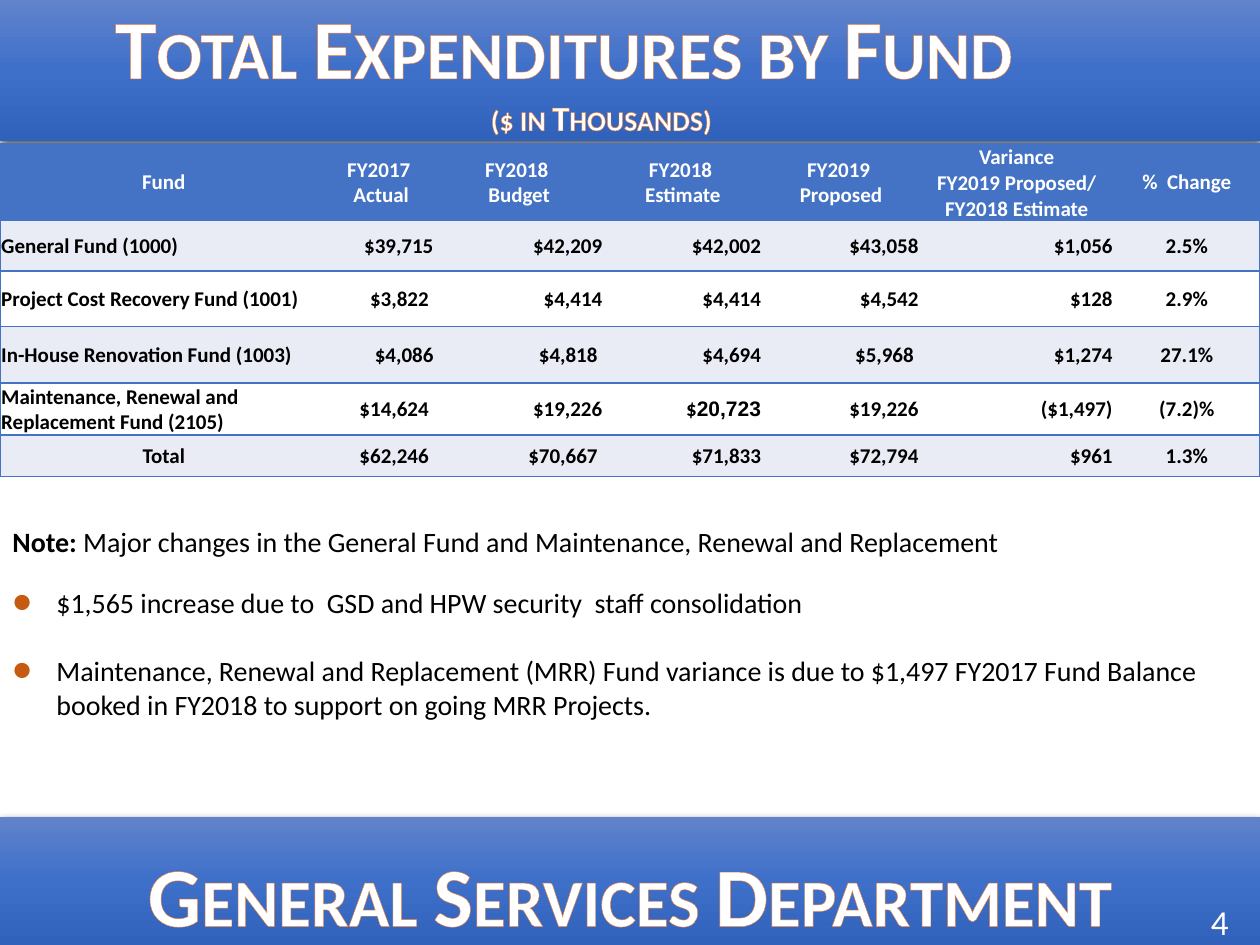
from copy import deepcopy
from dataclasses import dataclass

from pptx import Presentation
from pptx.dml.color import RGBColor
from pptx.enum.shapes import MSO_SHAPE
from pptx.enum.text import MSO_ANCHOR, MSO_AUTO_SIZE, PP_ALIGN
from pptx.oxml import parse_xml
from pptx.oxml.ns import nsdecls, qn
from pptx.util import Pt

RECT = MSO_SHAPE.RECTANGLE
LEFT, CENTER, RIGHT = PP_ALIGN.LEFT, PP_ALIGN.CENTER, PP_ALIGN.RIGHT
TOP, MIDDLE = MSO_ANCHOR.TOP, MSO_ANCHOR.MIDDLE
FIXED = MSO_AUTO_SIZE.NONE

WHITE = RGBColor(0xFF, 0xFF, 0xFF)
BLACK = RGBColor(0x00, 0x00, 0x00)
BLUE = RGBColor(0x44, 0x72, 0xC4)
PALE = RGBColor(0xE9, 0xEB, 0xF5)
ORANGE = RGBColor(0xED, 0x7D, 0x31)
RUST = RGBColor(0xC5, 0x5A, 0x11)
SHADES = (
    RGBColor(0x61, 0x83, 0xCB),
    RGBColor(0x3E, 0x70, 0xCA),
    RGBColor(0x30, 0x62, 0xBB),
)
PLAIN = "{2D5ABB26-0587-4C30-8999-92F81FD0307C}"


@dataclass(frozen=True)
class Box:
    left: float
    top: float
    width: float
    height: float

    def points(self) -> tuple:
        return Pt(self.left), Pt(self.top), Pt(self.width), Pt(self.height)


@dataclass(frozen=True)
class Style:
    size: float
    color: RGBColor = BLACK
    bold: bool = False
    font: str = "Calibri"
    fancy: bool = False


@dataclass(frozen=True)
class Run:
    text: str
    style: Style


BANNER = Style(48, WHITE, True, fancy=True)
UNITS = Style(20, WHITE, True, fancy=True)
NUMBER = Style(20, WHITE)
BODY = Style(16)
STRONG = Style(16, bold=True)
HEAD = Style(12, WHITE, True)
CELL = Style(12, bold=True)
ARIAL = Style(12, bold=True, font="Arial")

BANDS = (Box(0, 0, 720, 80.6), Box(0, 466.6, 720, 73.4))
COLS = (187.2, 61.2, 96.5, 90.7, 90, 110.9, 83.5)
ROWS = (44, 28.8, 31.7, 32.4, 29.5, 23.8)
HEADS = (
    ("Fund",),
    ("FY2017 ", "Actual"),
    ("FY2018 ", "Budget"),
    ("FY2018 ", "Estimate"),
    ("FY2019 ", "Proposed"),
    ("Variance", "FY2019 Proposed/ FY2018 Estimate"),
    ("%  Change",),
)
MIXED = (Run("$", CELL), Run("20,723", ARIAL))
FUNDS = (
    ("General Fund (1000)", "$39,715", "$42,209", "$42,002", "$43,058", "$1,056", "2.5%"),
    ("Project Cost Recovery Fund (1001)", "$3,822 ", "$4,414", "$4,414", "$4,542", "$128", "2.9%"),
    ("In-House Renovation Fund (1003)", "$4,086", "$4,818 ", "$4,694", "$5,968 ", "$1,274", "27.1%"),
    ("Maintenance, Renewal and Replacement Fund (2105)", "$14,624 ", "$19,226", MIXED,
     "$19,226", "($1,497)", "(7.2)%"),
    ("Total", "$62,246 ", "$70,667 ", "$71,833", "$72,794", "$961", "1.3%"),
)
NOTES = (
    "$1,565 increase due to  GSD and HPW security  staff consolidation",
    "Maintenance, Renewal and Replacement (MRR) Fund variance is due to $1,497 "
    "FY2017 Fund Balance booked in FY2018 to support on going MRR Projects.",
)


def add_run(para, item: Run) -> None:
    style = item.style
    run = para.add_run()
    run.text = item.text
    font = run.font
    font.size, font.bold, font.name = Pt(style.size), style.bold, style.font
    font.color.rgb = style.color
    if style.fancy:
        props = run._r.get_or_add_rPr()
        props.set("cap", "small")
        props.insert(0, parse_xml(
            f'<a:ln {nsdecls("a")} w="{Pt(0.52)}"><a:solidFill>'
            f'<a:srgbClr val="{ORANGE}"/></a:solidFill></a:ln>'))


def fill_text(frame, lines, align) -> list:
    for index, line in enumerate(lines):
        para = frame.add_paragraph() if index else frame.paragraphs[0]
        para.alignment = align
        for item in line:
            add_run(para, item)
    return list(frame.paragraphs)


def add_text(slide, box: Box, lines, align=LEFT, anchor=TOP) -> list:
    frame = slide.shapes.add_textbox(*box.points()).text_frame
    frame.word_wrap = True
    frame.vertical_anchor = anchor
    return fill_text(frame, lines, align)


def add_band(slide, box: Box) -> None:
    band = slide.shapes.add_shape(RECT, *box.points())
    band.fill.gradient()
    band.fill.gradient_angle = 270
    stops = band._element.spPr.find(".//" + qn("a:gsLst"))
    stops.append(deepcopy(stops[0]))
    for index, (stop, shade) in enumerate(zip(band.fill.gradient_stops, SHADES)):
        stop.position = index / 2
        stop.color.rgb = shade
    band.line.fill.background()
    band.shadow.inherit = False
    band._element.spPr.find(qn("a:effectLst")).append(parse_xml(
        f'<a:outerShdw {nsdecls("a")} blurRad="{Pt(4.5)}" dist="{Pt(1.5)}" dir="5400000">'
        f'<a:srgbClr val="{BLACK}"><a:alpha val="63000"/></a:srgbClr></a:outerShdw>'))
    slide.shapes.title._element.addprevious(band._element)


def add_title(slide) -> None:
    title = slide.shapes.title
    title.left, title.top, title.width, title.height = Box(0, -6.5, 687, 90).points()
    frame = title.text_frame
    frame.auto_size, frame.word_wrap, frame.vertical_anchor = FIXED, True, TOP
    frame.margin_left, frame.margin_right = Pt(7.2), Pt(50)
    lines = ([Run("Total Expenditures by Fund", BANNER)], [Run("($ in Thousands)", UNITS)])
    paras = fill_text(frame, lines, CENTER)
    paras[1]._p.get_or_add_pPr().set("marL", str(Pt(43)))


def edge_cell(cell, col: int) -> None:
    shown = {"L": col == 0, "R": col == len(COLS) - 1, "T": True, "B": True}
    props = cell._tc.get_or_add_tcPr()
    for index, (side, drawn) in enumerate(shown.items()):
        ink = f'<a:solidFill><a:srgbClr val="{BLUE}"/></a:solidFill>' if drawn else "<a:noFill/>"
        props.insert(index, parse_xml(
            f'<a:ln{side} {nsdecls("a")} w="{Pt(1)}">{ink}</a:ln{side}>'))


def set_cell(cell, col: int, lines, align, fill: RGBColor) -> None:
    cell.margin_left = cell.margin_right = cell.margin_top = Pt(0.72)
    cell.margin_bottom = 0
    cell.vertical_anchor = MIDDLE
    cell.fill.solid()
    cell.fill.fore_color.rgb = fill
    edge_cell(cell, col)
    fill_text(cell.text_frame, lines, align)


def add_grid(slide) -> None:
    box = Box(0, 82.1, sum(COLS), sum(ROWS))
    grid = slide.shapes.add_table(len(ROWS), len(COLS), *box.points()).table
    grid._tbl.tblPr.find(qn("a:tableStyleId")).text = PLAIN
    for col, width in zip(grid.columns, COLS):
        col.width = Pt(width)
    for row, height in zip(grid.rows, ROWS):
        row.height = Pt(height)
    for col, head in enumerate(HEADS):
        set_cell(grid.cell(0, col), col, [[Run(text, HEAD)] for text in head], CENTER, BLUE)
    for row, fund in enumerate(FUNDS, 1):
        first = CENTER if fund[0] == "Total" else LEFT
        aligns = (first, *[RIGHT] * 5, CENTER)
        for col, (value, align) in enumerate(zip(fund, aligns)):
            line = [Run(value, CELL)] if isinstance(value, str) else value
            set_cell(grid.cell(row, col), col, [line], align, PALE if row % 2 else WHITE)


def add_notes(slide) -> None:
    add_text(slide, Box(0, 296, 674, 26.6), [[
        Run("Note:", STRONG),
        Run(" Major changes in the General Fund and Maintenance, Renewal and Replacement", BODY),
    ]])
    paras = add_text(slide, Box(0, 331.2, 717, 104.4), [[Run(text, BODY)] for text in NOTES])
    paras[1].space_before = Pt(19.5)
    for para in paras:
        props = para._p.get_or_add_pPr()
        props.set("marL", str(Pt(25.2)))
        props.set("indent", str(Pt(-25.2)))
        for mark in (
            f'<a:buClr {nsdecls("a")}><a:srgbClr val="{RUST}"/></a:buClr>',
            f'<a:buSzPct {nsdecls("a")} val="200000"/>',
            f'<a:buFont {nsdecls("a")} typeface="Arial"/>',
            f'<a:buChar {nsdecls("a")} char="•"/>',
        ):
            props.append(parse_xml(mark))


def main() -> None:
    deck = Presentation()
    deck.slide_width, deck.slide_height = Pt(720), Pt(540)
    slide = deck.slides.add_slide(deck.slide_layouts[5])
    for band in BANDS:
        add_band(slide, band)
    add_title(slide)
    add_text(slide, Box(674, 513.4, 46, 26.6), [[Run("4", NUMBER)]], CENTER, MIDDLE)
    add_text(slide, Box(0, 478, 720, 65.5), [[Run("General Services Department", BANNER)]], CENTER)
    add_grid(slide)
    add_notes(slide)
    deck.save("out.pptx")


if __name__ == "__main__":
    main()
